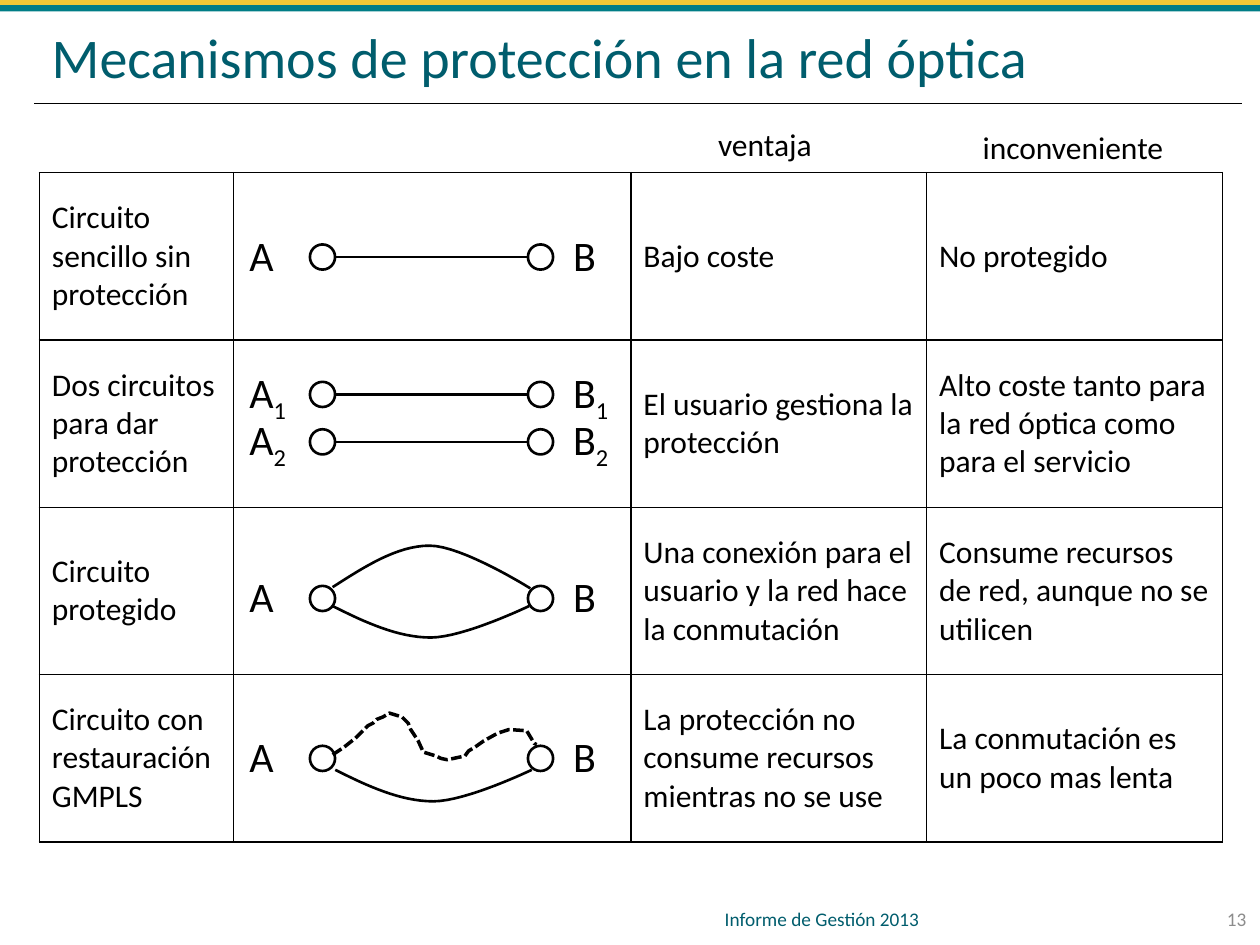
"""Build the slide comparing protection mechanisms in the optical network."""
from lxml import etree
from pptx import Presentation
from pptx.dml.color import RGBColor
from pptx.enum.dml import MSO_LINE
from pptx.enum.shapes import MSO_CONNECTOR, MSO_SHAPE
from pptx.enum.text import MSO_ANCHOR, PP_ALIGN
from pptx.oxml import parse_xml
from pptx.oxml.ns import nsdecls, qn
from pptx.util import Pt

LEFT, CENTER, RIGHT = PP_ALIGN.LEFT, PP_ALIGN.CENTER, PP_ALIGN.RIGHT
TOP, MIDDLE = MSO_ANCHOR.TOP, MSO_ANCHOR.MIDDLE
OVAL, RECT = MSO_SHAPE.OVAL, MSO_SHAPE.RECTANGLE
STRAIGHT, DASH = MSO_CONNECTOR.STRAIGHT, MSO_LINE.SQUARE_DOT
BLACK, WHITE, TEAL, GREY = "000000", "FFFFFF", "005D6D", "8C8C8C"
rgb = RGBColor.from_string


def write(tf, text, size, color=BLACK, align=LEFT, sub=""):
    p = tf.paragraphs[0]
    p.alignment = align
    for part in filter(None, (text, sub)):
        r = p.add_run()
        r.text = part
        for name, value in {"name": "Calibri", "size": Pt(size)}.items():
            setattr(r.font, name, value)
        r.font.color.rgb = rgb(color)
    if sub:
        r._r.get_or_add_rPr().set("baseline", "-25000")


def paint(sp, width, fill=None):
    if fill:
        sp.fill.solid()
        sp.fill.fore_color.rgb = rgb(fill)
    if width:
        sp.line.color.rgb = rgb(BLACK)
        sp.line.width = Pt(width)
    else:
        sp.line.fill.background()
    etree.SubElement(sp._element.spPr, qn("a:effectLst"))


prs = Presentation()
prs.slide_width, prs.slide_height = Pt(720), Pt(540)
s = prs.slides.add_slide(prs.slide_layouts[5])
shapes = s.shapes

for top, height, color in [(0.7, 5.8, "007D86"), (0, 2.9, "F1C835")]:
    paint(shapes.add_shape(RECT, 0, Pt(top), Pt(720), Pt(height)), 0, color)
paint(shapes.add_connector(STRAIGHT, Pt(19.5), Pt(59.2), Pt(710), Pt(59.2)), 0.75)

title = shapes.title
box = {"left": 22.3, "top": 5, "width": 676, "height": 54.7}
for name, value in box.items():
    setattr(title, name, Pt(value))
title.text_frame.vertical_anchor = MIDDLE
write(title.text_frame, "Mecanismos de protección en la red óptica", 32, TEAL)

rows = [
    ("Circuito sencillo sin protección", "", "Bajo coste", "No protegido"),
    ("Dos circuitos para dar protección", "", "El usuario gestiona la protección",
     "Alto coste tanto para la red óptica como para el servicio"),
    ("Circuito protegido", "",
     "Una conexión para el usuario y la red hace la conmutación",
     "Consume recursos de red, aunque no se utilicen"),
    ("Circuito con restauración GMPLS", "",
     "La protección no consume recursos mientras no se use",
     "La conmutación es un poco mas lenta"),
]
table = shapes.add_table(4, 4, Pt(22.5), Pt(98.7), Pt(676), Pt(382.4)).table
table.first_row = table.horz_banding = False
for column, width in zip(table.columns, (110.9, 227.1, 169, 169)):
    column.width = Pt(width)
for i, texts in enumerate(rows):
    table.rows[i].height = Pt(95.6)
    for j, text in enumerate(texts):
        cell = table.cell(i, j)
        for side in "LRTB":
            cell._tc.get_or_add_tcPr().append(parse_xml(
                f'<a:ln{side} {nsdecls("a")} w="12700"><a:solidFill>'
                f'<a:srgbClr val="{BLACK}"/></a:solidFill></a:ln{side}>'))
        cell.fill.background()
        cell.vertical_anchor = MIDDLE
        write(cell.text_frame, text, 18)

labels = [
    ("ventaja", 403.2, 67.7, 68.4, 28.8, 18, BLACK, LEFT, TOP),
    ("inconveniente", 554.4, 69.8, 118.8, 28.8, 18, BLACK, LEFT, TOP),
    ("13", 671.8, 510.5, 47.5, 28.8, 11, GREY, RIGHT, MIDDLE),
    ("Informe de Gestión 2013", 365, 510.5, 209.5, 28.8, 11, TEAL, CENTER, MIDDLE),
]
for text, x, y, w, h, size, color, align, anchor in labels:
    tf = shapes.add_textbox(Pt(x), Pt(y), Pt(w), Pt(h)).text_frame
    tf.word_wrap = True
    tf.vertical_anchor = anchor
    write(tf, text, size, color, align)

circuits = [(146.9, "", True), (225.4, "1", True), (252.5, "2", True),
            (342, "", False), (433.4, "", False)]
for y, sub, direct in circuits:
    for node, circle_x, label_x in [("A", 177.1, 135.4), ("B", 301.7, 320.4)]:
        paint(shapes.add_shape(OVAL, Pt(circle_x), Pt(y - 7.2), Pt(14.4), Pt(14.4)),
              1.5, WHITE)
        tf = shapes.add_textbox(Pt(label_x), Pt(y - 19.5), Pt(36), Pt(36)).text_frame
        tf.word_wrap = False
        write(tf, node, 24, sub=sub)
    if direct:
        paint(shapes.add_connector(STRAIGHT, Pt(191.5), Pt(y), Pt(301.7), Pt(y)), 1.5)

upper = [(190.1, 335.5), (208.1, 324), (226.8, 311.8), (245.5, 311.8),
         (264.2, 311.8), (303.1, 336.2), (303.1, 336.2)]
lower = [(190.1, 346.3), (208.8, 355.7), (227.5, 364.3), (246.2, 364.3),
         (265, 364.3), (302.4, 346.3), (302.4, 346.3)]
spare = [(x + 1.5, y + 93.6) for x, y in lower]
restored = [
    (190.1, 431.3), (196.6, 427), (203, 421.9), (205.2, 419.8), (210.2, 414.7),
    (213.1, 413.3), (215.3, 411.1), (218.9, 409.7), (222.5, 407.5), (229.7, 409.7),
    (233.3, 413.3), (234.7, 416.9), (239, 423.4), (241.9, 429.8), (249.1, 432),
    (252, 433.4), (255.6, 434.2), (265.7, 432), (267.8, 429.1), (271.4, 427),
    (276.5, 423.4), (284.4, 419), (290.9, 416.9), (301, 417.6), (305.3, 424.8),
    (306.7, 425.5)]
routes = []
for controls in (upper, lower, spare):
    points = []
    for k in (0, 3):
        for step in range(17):
            t = step / 16
            weights = ((1 - t) ** 3, 3 * t * (1 - t) ** 2, 3 * t * t * (1 - t), t ** 3)
            points.append([sum(w * c[axis] for w, c in zip(weights, controls[k:k + 4]))
                           for axis in (0, 1)])
    routes.append((points, 1.5))
routes.append((restored, 2))
for points, width in routes:
    path_points = [(Pt(x), Pt(y)) for x, y in points]
    builder = shapes.build_freeform(*path_points[0])
    builder.add_line_segments(path_points[1:], close=False)
    sp = builder.convert_to_shape()
    sp.fill.background()
    paint(sp, width)
sp.line.dash_style = DASH

prs.save("out.pptx")
